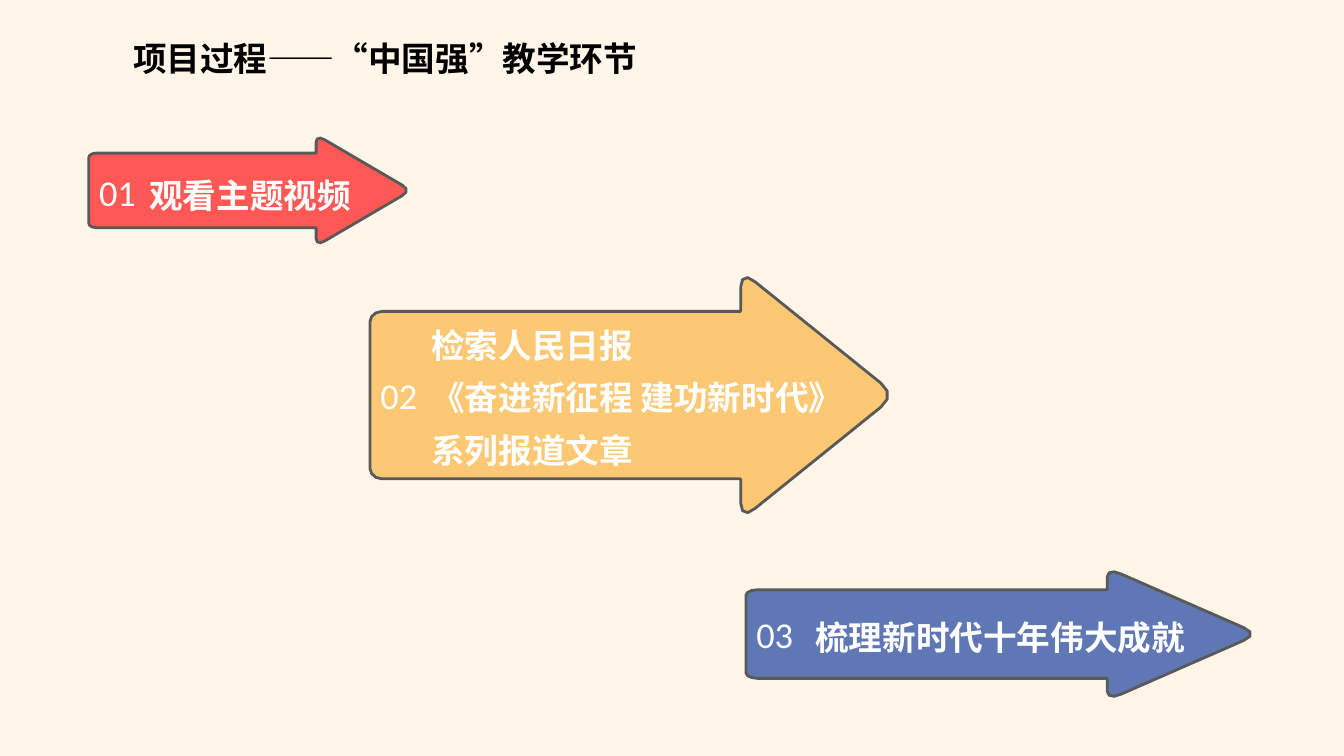
from pptx import Presentation
from pptx import util as u
from pptx.dml.color import RGBColor
from pptx.enum import text
from pptx.oxml.ns import qn
from lxml import etree

CREAM = RGBColor(0xFF, 0xF5, 0xE9)
RED = RGBColor(0xFF, 0x58, 0x55)
AMBER = RGBColor(0xFD, 0xC8, 0x73)
BLUE = RGBColor(0x60, 0x77, 0xB6)
GREY = RGBColor(0x59, 0x59, 0x59)
WHITE = RGBColor(0xFF, 0xFF, 0xFF)
BLACK = RGBColor(0, 0, 0)
CJK = "Noto Sans CJK SC"
LATIN = "Calibri"

WIDTH, HEIGHT = u.Inches(13.33), u.Inches(7.5)
COL, ROW = WIDTH / 100, HEIGHT / 100

TIP = [(98.4, 55), (100.2, 52), (100.2, 48), (98.4, 45)]
BARB = [(74.2, 2.8), (72.6, -0.4), (71.4, 0.7), (71.4, 5)]
NECK = [(71.4, 15.1)]
TAIL = [(2.3, 15.1), (1, 15.1), (0, 17.2), (0, 19.4)]

STEPS = [
    ("01", ["观看主题视频"], RED, (6.6, 18.13, 23.7, 14.13), 3.77, 16.65, 0.25),
    ("02", ["检索人民日报", "《奋进新征程 建功新时代》", "系列报道文章"], AMBER,
     (27.53, 36.4, 38.63, 31.73), 3.83, 38.63, 0),
    ("03", ["梳理新时代十年伟大成就"], BLUE, (55.5, 75.47, 37.65, 16.8), 4.43, 29.25, 0),
]


def grid(x, y, w, h):
    return [round(v) for v in (x * COL, y * ROW, w * COL, h * ROW)]


def curve(controls, steps=3):
    points = []
    for i in range(steps + 1):
        t = i / steps
        weights = ((1 - t) ** 3, 3 * t * (1 - t) ** 2, 3 * t * t * (1 - t), t ** 3)
        points.append(tuple(sum(k * c[axis] for k, c in zip(weights, controls))
                            for axis in (0, 1)))
    return points


def arrow_outline():
    top = curve(BARB) + NECK + curve(TAIL)
    bottom = [(x, 100 - y) for x, y in reversed(top)]
    return curve(TIP) + top + bottom


def add_arrow(shapes, box, color):
    left, top, width, height = grid(*box)
    points = [(round(left + x * width / 100), round(top + y * height / 100))
              for x, y in arrow_outline()]
    builder = shapes.build_freeform(*points[0])
    builder.add_line_segments(points[1:], close=True)
    sp = builder.convert_to_shape()
    sp.shadow.inherit = False
    sp.fill.solid()
    sp.fill.fore_color.rgb = color
    sp.line.color.rgb = GREY
    sp.line.width = u.Pt(2)


def style(p, name, size, color, bold=False):
    font = p.font
    font.name, font.size, font.bold = name, u.Pt(size), bold
    font.color.rgb = color
    latin = p._p.pPr.find(qn("a:defRPr")).find(qn("a:latin"))
    ea = etree.Element(qn("a:ea"), typeface=name)
    latin.addnext(ea)


def add_label(shapes, box, lines, name, size, bold=False, wrap=False,
              inset=True, spacing=None):
    sp = shapes.add_textbox(*grid(*box))
    tf = sp.text_frame
    tf.word_wrap = wrap
    if not inset:
        tf.margin_left = tf.margin_right = tf.margin_top = tf.margin_bottom = 0
    tf.text = "\n".join(lines)
    for p in tf.paragraphs:
        if spacing:
            p.line_spacing = spacing
        style(p, name, size, WHITE, bold)


def add_title(slide, wording):
    sp = slide.shapes.title
    sp.left, sp.top, sp.width, sp.height = grid(9.15, 4.4, 39.75, 6.67)
    tf = sp.text_frame
    tf.word_wrap = False
    tf.vertical_anchor = text.MSO_ANCHOR.TOP
    tf.text = wording
    p = tf.paragraphs[0]
    p.alignment = text.PP_ALIGN.JUSTIFY
    style(p, CJK, 24, BLACK, True)


def add_step(slide, number, lines, color, box, offset, width, drop):
    shapes = slide.shapes.add_group_shape().shapes
    x, y, w, h = box
    middle = y + h / 2 + drop
    add_arrow(shapes, box, color)
    add_label(shapes, (x + 0.77, middle - 2.93, 2.85, 5.87), [number], LATIN, 26,
              inset=False)
    height = 7.07 * len(lines) + 0.53
    add_label(shapes, (x + offset, middle - 0.7 - height / 2, width, height), lines,
              CJK, 24, bold=True, wrap=len(lines) > 1, spacing=1.3)


def main():
    prs = Presentation()
    prs.slide_width, prs.slide_height = WIDTH, HEIGHT
    slide = prs.slides.add_slide(prs.slide_layouts[5])
    slide.background.fill.solid()
    slide.background.fill.fore_color.rgb = CREAM
    add_title(slide, "项目过程——“中国强”教学环节")
    for step in STEPS:
        add_step(slide, *step)
    prs.save("out.pptx")


if __name__ == "__main__":
    main()
